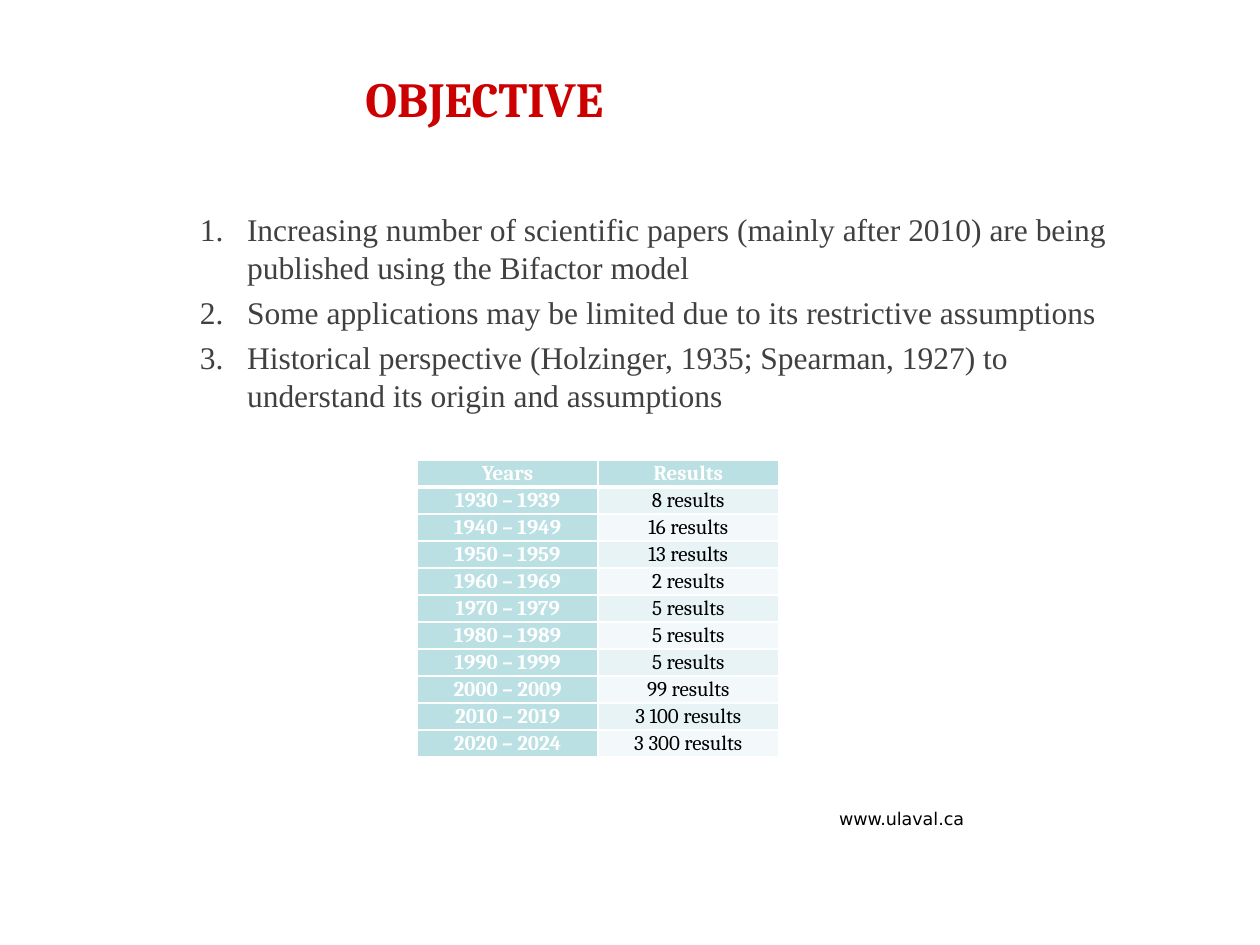
from lxml.etree import SubElement
from pptx import Presentation
from pptx.dml.color import RGBColor
from pptx.enum.text import MSO_ANCHOR as Anchor, MSO_AUTO_SIZE as AutoSize, PP_ALIGN as Align
from pptx.oxml.ns import qn
from pptx.util import Pt

COLORS = {
    "title": "CC0000",
    "body": "404040",
    "black": "000000",
    "white": "FFFFFF",
    "head": "BBE0E3",
    "odd": "E7F3F4",
    "even": "F3F9FA",
}
SERIF, BODY_FONT, WEB_FONT = "Cambria", "Times New Roman", "DejaVu Sans"

OBJECTIVES = [
    "Increasing number of scientific papers (mainly after 2010) are being published using the Bifactor model",
    "Some applications may be limited due to its restrictive assumptions",
    "Historical perspective (Holzinger, 1935; Spearman, 1927) to understand its origin and assumptions",
]
RESULTS = [
    ("Years", "Results"),
    ("1930 – 1939", "8 results"),
    ("1940 – 1949", "16 results"),
    ("1950 – 1959", "13 results"),
    ("1960 – 1969", "2 results"),
    ("1970 – 1979", "5 results"),
    ("1980 – 1989", "5 results"),
    ("1990 – 1999", "5 results"),
    ("2000 – 2009", "99 results"),
    ("2010 – 2019", "3 100 results"),
    ("2020 – 2024", "3 300 results"),
]


class SlideBuilder:
    def __init__(self, presentation):
        self.slide = presentation.slides.add_slide(presentation.slide_layouts[5])

    def style(self, paragraph, font_name, size, color, bold=False):
        for run in paragraph.runs:
            font = run.font
            font.name, font.size, font.bold = font_name, Pt(size), bold
            font.color.rgb = RGBColor.from_string(COLORS[color])

    def title(self, text, left, top, width, height):
        shape = self.slide.shapes.title
        shape.left, shape.top, shape.width, shape.height = map(Pt, (left, top, width, height))
        frame = shape.text_frame
        frame.text = text
        frame.auto_size = AutoSize.NONE
        frame.vertical_anchor = Anchor.BOTTOM
        paragraph = frame.paragraphs[0]
        paragraph.alignment = Align.LEFT
        self.style(paragraph, SERIF, 28, "title", bold=True)

    def text(self, lines, left, top, width, height, font_name, size, color, numbered=False):
        box = self.slide.shapes.add_textbox(*map(Pt, (left, top, width, height)))
        frame = box.text_frame
        frame.word_wrap = True
        frame.margin_left = frame.margin_top = frame.margin_right = frame.margin_bottom = 0
        frame.text = "\n".join(lines)
        for index, paragraph in enumerate(frame.paragraphs):
            if numbered:
                self.number(paragraph)
            if index:
                paragraph.space_before = Pt(4.3)
            self.style(paragraph, font_name, size, color)

    def number(self, paragraph):
        properties = paragraph._p.get_or_add_pPr()
        properties.set("marL", str(Pt(41.75)))
        properties.set("indent", str(-Pt(27)))
        SubElement(properties, qn("a:buFont"), typeface="+mj-lt")
        SubElement(properties, qn("a:buAutoNum"), type="arabicPeriod")

    def table(self, rows, left, top, column_width, row_height):
        columns = len(rows[0])
        size = (column_width * columns, row_height * len(rows))
        frame = self.slide.shapes.add_table(len(rows), columns, *map(Pt, (left, top, *size)))
        table = frame.table
        for row_index, row in enumerate(rows):
            table.rows[row_index].height = Pt(row_height)
            for column_index, text in enumerate(row):
                heading = row_index == 0 or column_index == 0
                fill = "head" if heading else "odd" if row_index % 2 else "even"
                # The rule under the header row is thicker
                top_line = 3 if row_index == 1 else 1
                bottom_line = 3 if row_index == 0 else 1
                self.cell(table.cell(row_index, column_index), text, heading, fill, top_line, bottom_line)

    def cell(self, cell, text, heading, fill, top_line, bottom_line):
        cell.margin_left = cell.margin_right = Pt(5)
        cell.margin_top = cell.margin_bottom = 0
        for side, width in (("L", 1), ("R", 1), ("T", top_line), ("B", bottom_line)):
            self.border(cell, side, width)
        cell.fill.solid()
        cell.fill.fore_color.rgb = RGBColor.from_string(COLORS[fill])
        cell.text_frame.text = text
        paragraph = cell.text_frame.paragraphs[0]
        paragraph.alignment = Align.CENTER
        paragraph.line_spacing = 1.07
        paragraph.space_after = Pt(8)
        self.style(paragraph, SERIF, 12, "white" if heading else "black", heading)

    def border(self, cell, side, width):
        properties = cell._tc.get_or_add_tcPr()
        line = SubElement(properties, qn(f"a:ln{side}"), w=str(Pt(width)))
        fill = SubElement(line, qn("a:solidFill"))
        SubElement(fill, qn("a:srgbClr"), val=COLORS["white"])


def main():
    presentation = Presentation()
    presentation.slide_width, presentation.slide_height = Pt(720), Pt(540)
    builder = SlideBuilder(presentation)

    # Web address
    builder.text(["www.ulaval.ca"], 479.5, 461.5, 99.5, 12, WEB_FONT, 10, "black")

    # Numbered objectives
    builder.text(OBJECTIVES, 99.4, 120, 550, 114, BODY_FONT, 18, "body", numbered=True)

    # Heading
    builder.title("OBJECTIVE", 201.6, 20.9, 341.3, 55.4)

    # Search results per decade
    builder.table(RESULTS, 238.5, 262.8, 103.2, 14.6)

    presentation.save("out.pptx")


if __name__ == "__main__":
    main()
